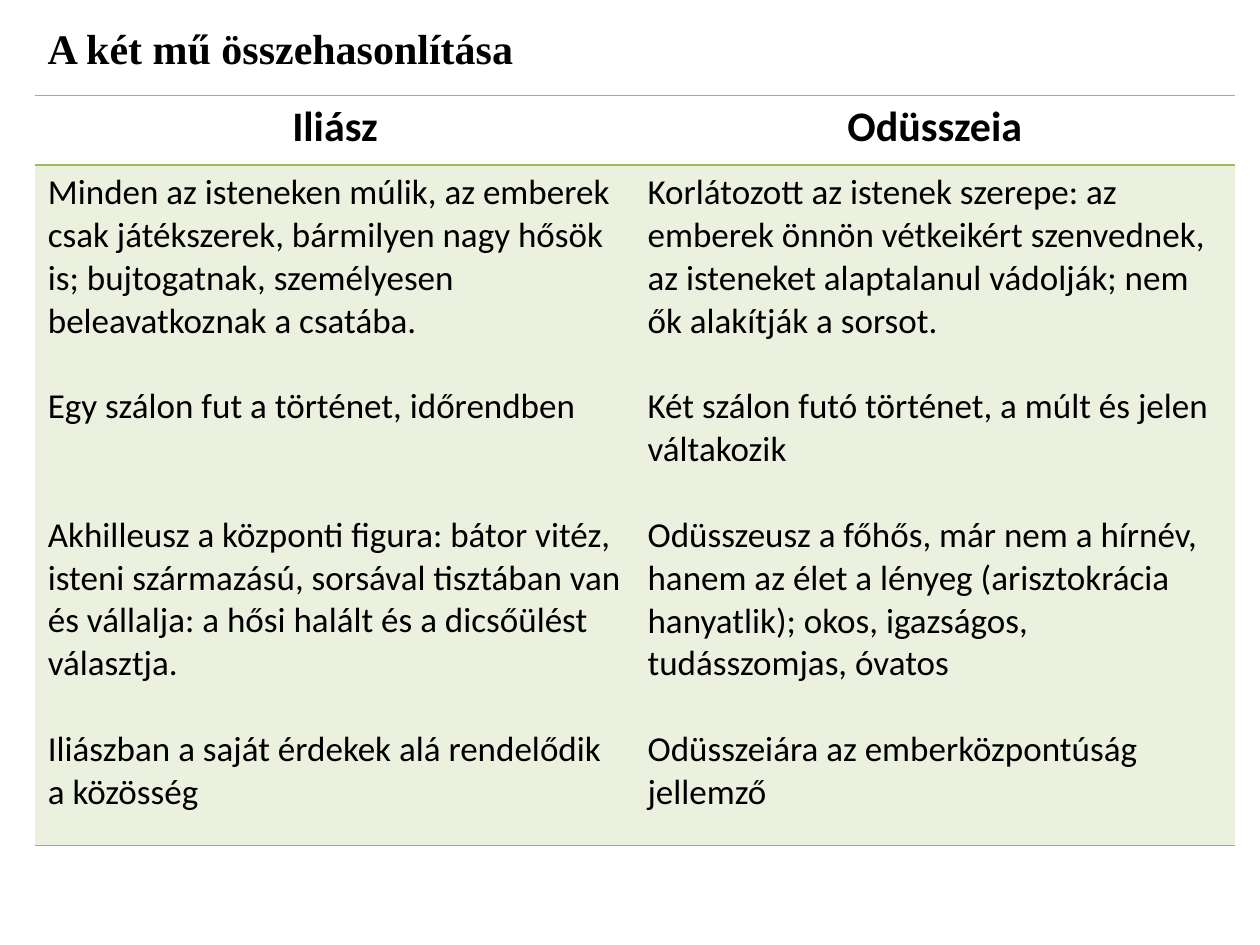
"""Builds a slide comparing the Iliad and the Odyssey in a two-column table."""
from lxml import etree
from pptx import Presentation
from pptx.dml.color import RGBColor
from pptx.enum.text import PP_ALIGN
from pptx.oxml.ns import qn
from pptx.util import Inches, Pt

LEFT, CENTER = PP_ALIGN.LEFT, PP_ALIGN.CENTER
COLORS = {"text": "000000", "accent": "9BBB59", "tint": "EBF1DE", "paper": "FFFFFF", "rule": "A6A6A6"}
TITLE = "A két mű összehasonlítása"
HEADINGS = ["Iliász", "Odüsszeia"]
BODY = [
    [
        ("Minden az isteneken múlik, az emberek csak játékszerek, bármilyen nagy hősök is; "
         "bujtogatnak, személyesen beleavatkoznak a csatába.", 1),
        ("Egy szálon fut a történet, időrendben", 2),
        ("Akhilleusz a központi figura: bátor vitéz, isteni származású, sorsával tisztában van "
         "és vállalja: a hősi halált és a dicsőülést választja.", 1),
        ("Iliászban a saját érdekek alá rendelődik a közösség", 0),
    ],
    [
        ("Korlátozott az istenek szerepe: az emberek önnön vétkeikért szenvednek, az isteneket "
         "alaptalanul vádolják; nem ők alakítják a sorsot.", 1),
        ("Két szálon futó történet, a múlt és jelen váltakozik", 1),
        ("Odüsszeusz a főhős, már nem a hírnév, hanem az élet a lényeg (arisztokrácia hanyatlik); "
         "okos, igazságos, tudásszomjas, óvatos", 1),
        ("Odüsszeiára az emberközpontúság jellemző", 0),
    ],
]
FONTS = {
    "title": {"name": "Times New Roman", "size": Pt(24), "bold": True},
    "heading": {"name": "Calibri", "size": Pt(24), "bold": True},
    "body": {"name": "Calibri", "size": Pt(20), "bold": False},
}
MARGIN, TABLE_TOP, COLUMN_WIDTH = 0.28, 0.76, 4.76
ROW_HEIGHTS = [0.55, 5.4]
LINE_PITCH = 24.4
ROWS = [
    {"font": "heading", "align": CENTER, "fill": "paper",
     "borders": {"L": None, "R": None, "T": ("rule", 0.5), "B": ("accent", 1)},
     "cells": [[(heading, 0)] for heading in HEADINGS]},
    {"font": "body", "align": LEFT, "fill": "tint",
     "borders": {"L": None, "R": None, "T": ("accent", 1), "B": ("accent", 1)},
     "cells": BODY},
]


def write(text_frame, paragraphs, font, align):
    for index, (text, blank_lines) in enumerate(paragraphs):
        paragraph = text_frame.paragraphs[0] if index == 0 else text_frame.add_paragraph()
        paragraph.alignment = align
        paragraph.space_after = Pt(blank_lines * LINE_PITCH)
        run = paragraph.add_run()
        run.text = text
        for name, value in FONTS[font].items():
            setattr(run.font, name, value)
        run.font.color.rgb = RGBColor.from_string(COLORS["text"])


def set_borders(cell, borders):
    properties = cell._tc.get_or_add_tcPr()
    for index, (side, border) in enumerate(borders.items()):
        line = etree.Element(qn(f"a:ln{side}"))
        properties.insert(index, line)
        if border is None:
            etree.SubElement(line, qn("a:noFill"))
            continue
        color, width = border
        line.set("w", str(Pt(width)))
        fill = etree.SubElement(line, qn("a:solidFill"))
        etree.SubElement(fill, qn("a:srgbClr"), val=COLORS[color])


def add_title(slide):
    box = slide.shapes.add_textbox(Inches(MARGIN), Inches(0.13), Inches(9.22), Inches(0.63))
    box.text_frame.word_wrap = True
    write(box.text_frame, [(TITLE, 0)], "title", LEFT)
    box.text_frame.paragraphs[0].space_before = Pt(3)


def add_comparison(slide):
    columns = len(HEADINGS)
    table = slide.shapes.add_table(
        len(ROWS), columns, Inches(MARGIN), Inches(TABLE_TOP),
        Inches(columns * COLUMN_WIDTH), Inches(sum(ROW_HEIGHTS))).table
    table.first_row = table.horz_banding = False
    for column in table.columns:
        column.width = Inches(COLUMN_WIDTH)
    for row_index, row in enumerate(ROWS):
        table.rows[row_index].height = Inches(ROW_HEIGHTS[row_index])
        for column_index, paragraphs in enumerate(row["cells"]):
            cell = table.cell(row_index, column_index)
            cell.fill.solid()
            cell.fill.fore_color.rgb = RGBColor.from_string(COLORS[row["fill"]])
            set_borders(cell, row["borders"])
            write(cell.text_frame, paragraphs, row["font"], row["align"])


def main():
    presentation = Presentation()
    presentation.slide_width, presentation.slide_height = Inches(10), Inches(7.5)
    slide = presentation.slides.add_slide(presentation.slide_layouts[6])
    add_title(slide)
    add_comparison(slide)
    presentation.save("out.pptx")


if __name__ == "__main__":
    main()
